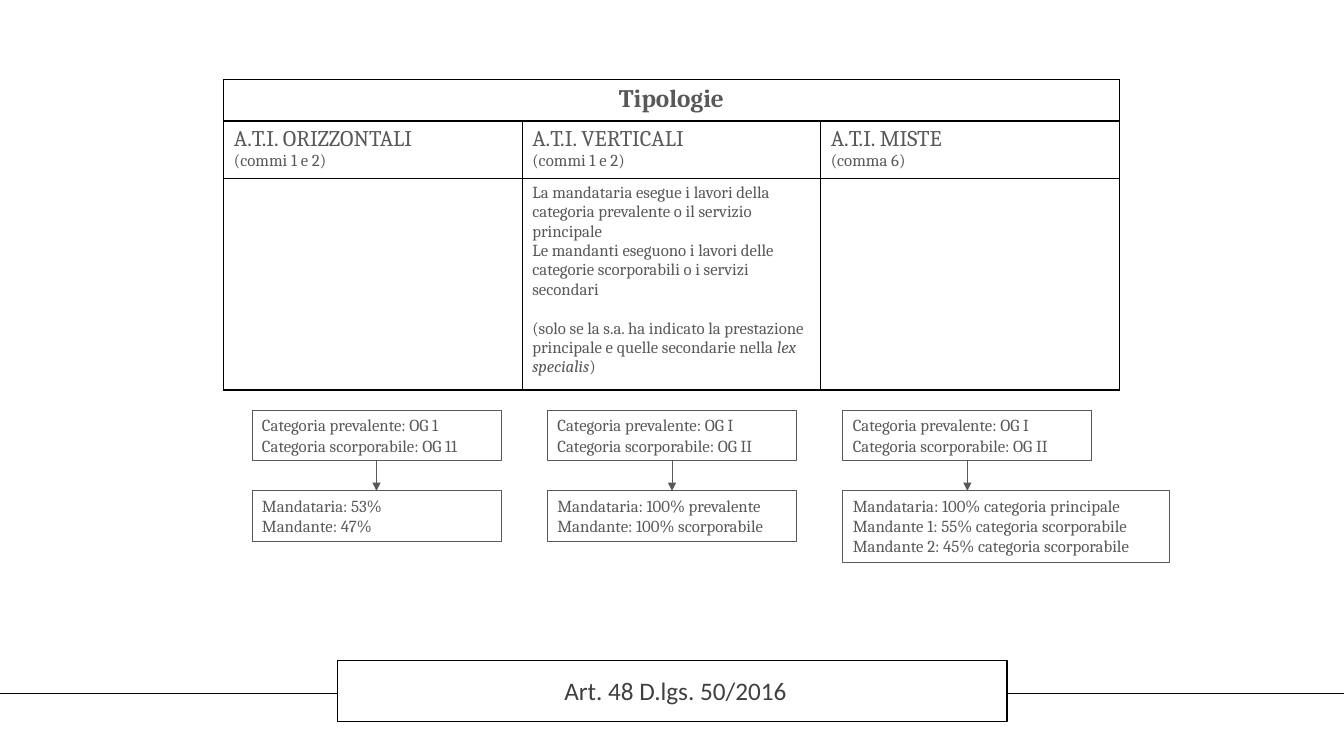
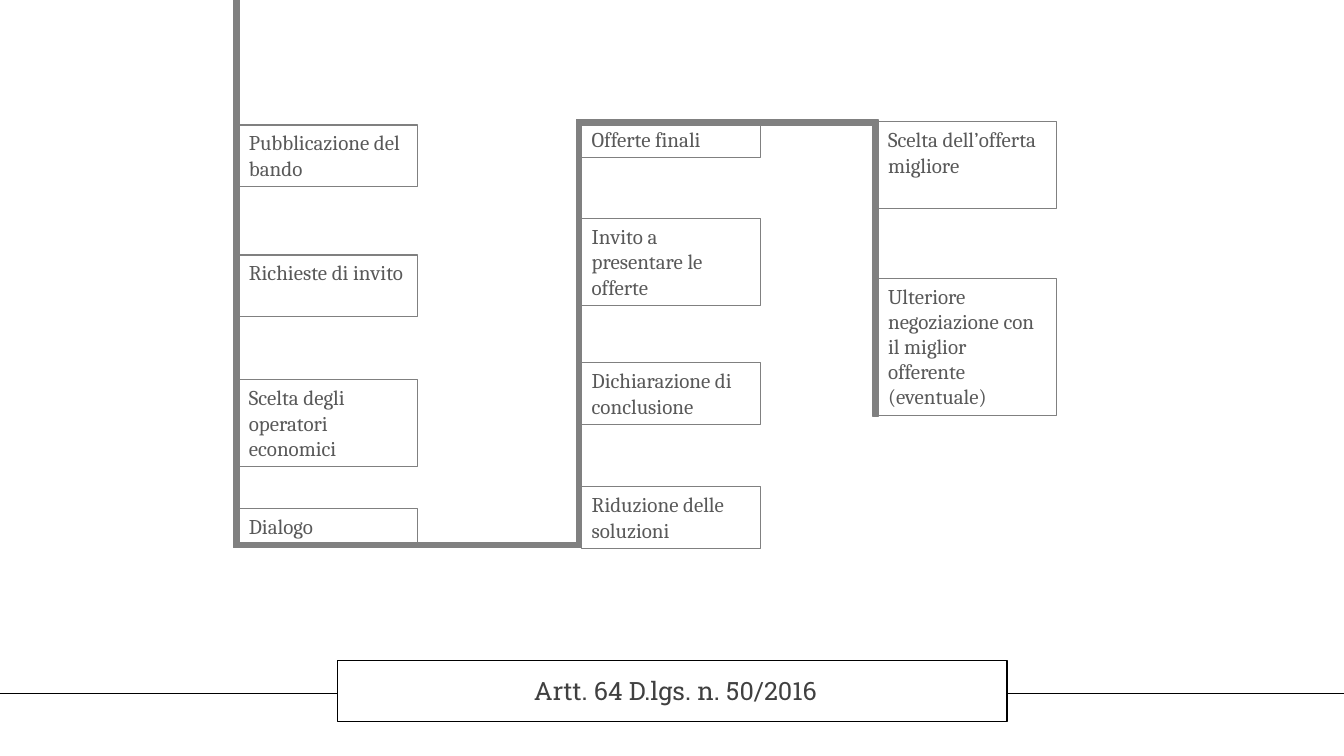
from lxml.etree import SubElement
from pptx import Presentation
from pptx.dml.color import RGBColor
from pptx.enum.shapes import MSO_CONNECTOR, MSO_SHAPE
from pptx.enum.text import MSO_ANCHOR, PP_ALIGN
from pptx.oxml.ns import qn
from pptx.util import Inches, Pt

BLACK, TITLE_GREY, TEXT_GREY, RAIL_GREY = "000000", "404040", "595959", "808080"
BODY_FONT = "Cambria"


def color(hex_text):
    return RGBColor.from_string(hex_text)


def write(frame, lines, size):
    """Fill a text frame with one paragraph per line, in the body style."""
    for number, line in enumerate(lines):
        para = frame.paragraphs[0] if number == 0 else frame.add_paragraph()
        para.alignment = PP_ALIGN.LEFT
        span = para.add_run()
        span.text = line
        span.font.name = BODY_FONT
        span.font.size = Pt(size)
        span.font.color.rgb = color(TEXT_GREY)


deck = Presentation()
deck.slide_width, deck.slide_height = Inches(13.33), Inches(7.5)

# Shared layout: title at the foot of the slide, in a framed band
layout = deck.slide_layouts.get_by_name("Title Only")
layout_title = layout.placeholders[0]
for placeholder in list(layout.placeholders)[1:]:
    placeholder.element.getparent().remove(placeholder.element)
layout_title.left, layout_title.top = Inches(4), Inches(6.65)
layout_title.width, layout_title.height = Inches(5.4), Inches(0.4)

pages = []
for title, font_name in [("Art. 48 D.lgs. 50/2016", "Calibri"),
                         ("Artt. 64 D.lgs. n. 50/2016", "Roboto Slab")]:
    page = deck.slides.add_slide(layout)
    para = page.shapes.title.text_frame.paragraphs[0]
    para.alignment = PP_ALIGN.CENTER
    span = para.add_run()
    span.text = title
    span.font.name = font_name
    span.font.size = Pt(18)
    span.font.color.rgb = color(TITLE_GREY)
    pages.append(page)
types_page, dialogue_page = pages

band = types_page.shapes.add_shape(
    MSO_SHAPE.RECTANGLE, Inches(3.35), Inches(6.55), Inches(6.64), Inches(0.61))
band.shadow.inherit = False
band.fill.background()
band.line.color.rgb = color(BLACK)
band.line.width = Pt(1)
band_parts = [band]
for start, end in [(0, 3.35), (9.99, 13.33)]:
    rule = types_page.shapes.add_connector(
        MSO_CONNECTOR.STRAIGHT, Inches(start), Inches(6.88), Inches(end), Inches(6.88))
    rule.line.color.rgb = color(BLACK)
    rule.line.width = Pt(0.5)
    SubElement(rule.element.spPr, qn("a:effectLst"))
    band_parts.append(rule)
for part in band_parts:
    layout_title.element.addprevious(part.element)

# Slide 1: table of the three types
table = types_page.shapes.add_table(
    3, 3, Inches(2.22), Inches(0.79), Inches(8.89), Inches(3.07)).table
table.first_row = table.horz_banding = False
for column in table.columns:
    column.width = Inches(2.96)
for row, height in zip(table.rows, [0.41, 0.57, 2.1]):
    row.height = Inches(height)
for cell in table.iter_cells():
    properties = cell._tc.get_or_add_tcPr()
    for side in ["lnL", "lnR", "lnT", "lnB"]:
        border = SubElement(properties, qn(f"a:{side}"), w=str(Pt(1)))
        fill = SubElement(border, qn("a:solidFill"))
        SubElement(fill, qn("a:srgbClr"), val=BLACK)
    cell.fill.background()

heading = table.cell(0, 0)
heading.merge(table.cell(0, 2))
write(heading.text_frame, ["Tipologie"], 18)
heading.text_frame.paragraphs[0].alignment = PP_ALIGN.CENTER
heading.text_frame.paragraphs[0].runs[0].font.bold = True

for column, (name, clauses) in enumerate([("A.T.I. ORIZZONTALI", "(commi 1 e 2)"),
                                          ("A.T.I. VERTICALI", "(commi 1 e 2)"),
                                          ("A.T.I. MISTE", "(comma 6)")]):
    frame = table.cell(1, column).text_frame
    write(frame, [name, clauses], 12)
    frame.paragraphs[0].runs[0].font.size = Pt(16)

frame = table.cell(2, 1).text_frame
write(frame, [
    "La mandataria esegue i lavori della categoria prevalente o il servizio principale",
    "Le mandanti eseguono i lavori delle categorie scorporabili o i servizi secondari",
    "(solo se la s.a. ha indicato la prestazione principale e quelle secondarie nella ",
], 12)
note = frame.paragraphs[2]
note.space_before = Pt(14)
for text, italic in [("lex specialis", True), (")", False)]:
    span = note.add_run()
    span.text = text
    span.font.name = BODY_FONT
    span.font.size = Pt(12)
    span.font.italic = italic
    span.font.color.rgb = color(TEXT_GREY)

# Boxes of both slides: page, left, top, width, height, lines, text size, outline
boxes = []
examples = [
    (["Categoria prevalente: OG 1", "Categoria scorporabile: OG 11"],
     ["Mandataria: 53%", "Mandante: 47%"], 2.47, 0.5),
    (["Categoria prevalente: OG I", "Categoria scorporabile: OG II"],
     ["Mandataria: 100% prevalente", "Mandante: 100% scorporabile"], 2.47, 0.5),
    (["Categoria prevalente: OG I", "Categoria scorporabile: OG II"],
     ["Mandataria: 100% categoria principale", "Mandante 1: 55% categoria scorporabile",
      "Mandante 2: 45% categoria scorporabile"], 3.24, 0.71),
]
for number, (categories, shares, width, height) in enumerate(examples):
    left = 2.5 + 2.93 * number
    boxes.append((types_page, left, 4.07, 2.47, 0.5, categories, 12, TEXT_GREY))
    boxes.append((types_page, left, 4.87, width, height, shares, 12, TEXT_GREY))
    center = Inches(left + 2.47 / 2)
    arrow = types_page.shapes.add_connector(
        MSO_CONNECTOR.STRAIGHT, center, Inches(4.57), center, Inches(4.87))
    arrow.line.color.rgb = color(TEXT_GREY)
    arrow.line.width = Pt(0.5)
    SubElement(arrow.element.spPr.find(qn("a:ln")), qn("a:tailEnd"), type="triangle")
    SubElement(arrow.element.spPr, qn("a:effectLst"))

steps = [
    (2.37, 1.24, 0.61, "Pubblicazione del bando"),
    (2.37, 2.53, 0.61, "Richieste di invito"),
    (2.37, 3.77, 0.86, "Scelta degli operatori economici"),
    (2.37, 5.04, 0.35, "Dialogo"),
    (5.77, 4.83, 0.61, "Riduzione delle soluzioni"),
    (5.77, 3.6, 0.61, "Dichiarazione di conclusione"),
    (5.77, 2.17, 0.86, "Invito a presentare le offerte"),
    (5.77, 1.21, 0.35, "Offerte finali"),
    (8.71, 1.21, 0.86, "Scelta dell’offerta migliore"),
    (8.71, 2.76, 1.36, "Ulteriore negoziazione con il miglior offerente (eventuale)"),
]
for left, top, height, text in steps:
    boxes.append((dialogue_page, left, top, 1.77, height, [text], 15, RAIL_GREY))

for page, left, top, width, height, lines, size, outline in boxes:
    box = page.shapes.add_shape(
        MSO_SHAPE.RECTANGLE, Inches(left), Inches(top), Inches(width), Inches(height))
    box.shadow.inherit = False
    box.fill.background()
    box.line.color.rgb = color(outline)
    box.line.width = Pt(0.75)
    box.text_frame.word_wrap = True
    box.text_frame.vertical_anchor = MSO_ANCHOR.TOP
    write(box.text_frame, lines, size)

# Slide 2: rail that joins the steps, down, up and down again
for left, top, width, height in [(2.32, 0, 0.05, 5.43), (5.72, 1.19, 0.05, 4.23),
                                 (8.66, 1.19, 0.05, 2.94), (2.32, 5.38, 3.45, 0.05),
                                 (5.72, 1.19, 2.99, 0.05)]:
    rail = dialogue_page.shapes.add_shape(
        MSO_SHAPE.RECTANGLE, Inches(left), Inches(top), Inches(width), Inches(height))
    rail.shadow.inherit = False
    rail.fill.solid()
    rail.fill.fore_color.rgb = color(RAIL_GREY)
    rail.line.color.rgb = color(RAIL_GREY)
    rail.line.width = Pt(1)

deck.save("out.pptx")
